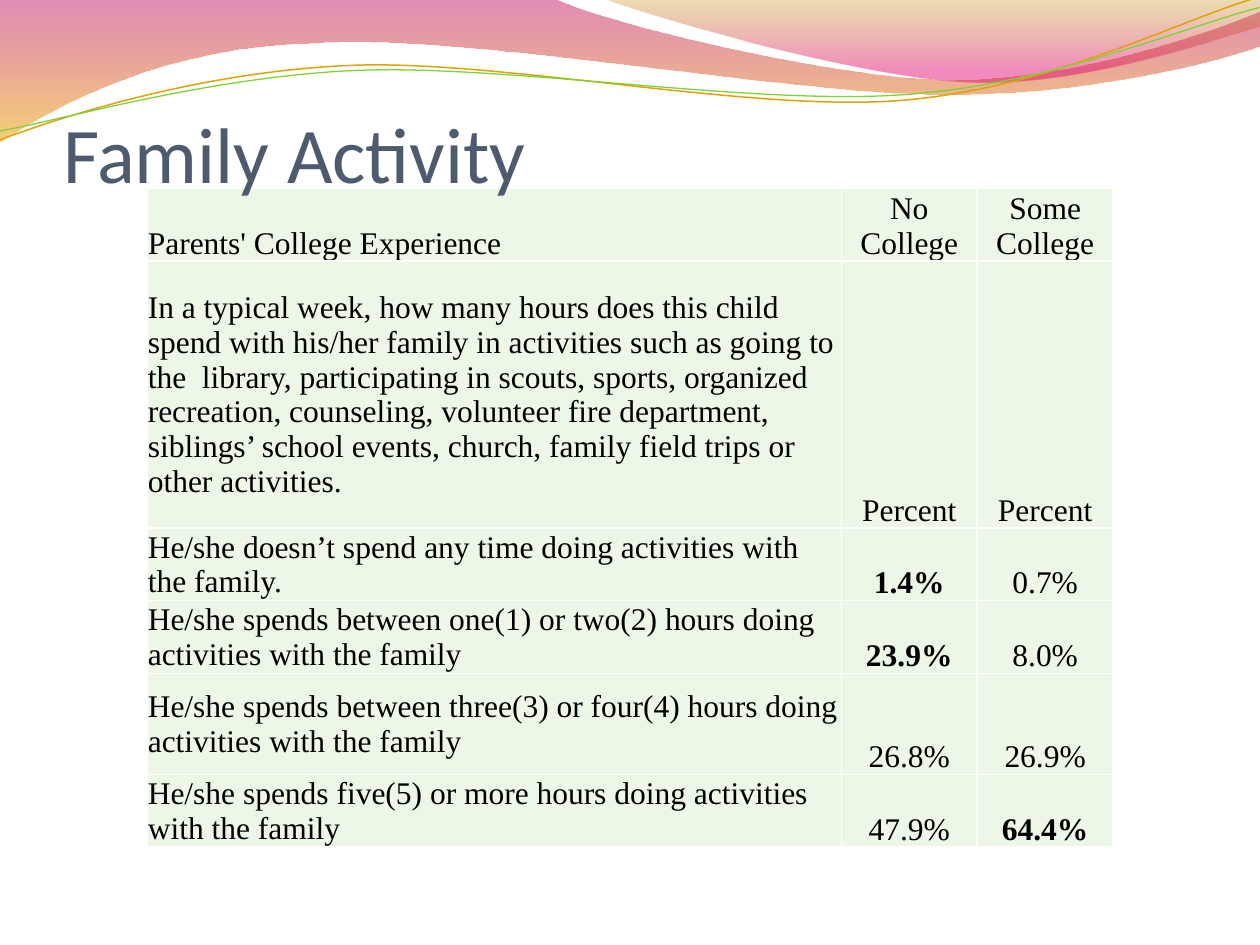
from lxml.etree import SubElement
from pptx import Presentation
from pptx.dml.color import RGBColor
from pptx.enum.text import MSO_ANCHOR, MSO_AUTO_SIZE, PP_ALIGN
from pptx.oxml import parse_xml
from pptx.oxml.ns import nsdecls, qn
from pptx.util import Cm, Pt

# Content
TITLE = "Family Activity"
ROWS = [
    ("Parents' College Experience", "No College", "Some College"),
    ("In a typical week, how many hours does this child spend with his/her family in "
     "activities such as going to the  library, participating in scouts, sports, "
     "organized recreation, counseling, volunteer fire department, siblings’ school "
     "events, church, family field trips or other activities.", "Percent", "Percent"),
    ("He/she doesn’t spend any time doing activities with the family.", "1.4%", "0.7%"),
    ("He/she spends between one(1) or two(2) hours doing activities with the family",
     "23.9%", "8.0%"),
    ("He/she spends between three(3) or four(4) hours doing activities with the family",
     "26.8%", "26.9%"),
    ("He/she spends five(5) or more hours doing activities with the family",
     "47.9%", "64.4%"),
]
BOLD_VALUES = {"1.4%", "23.9%", "64.4%"}
COLUMN_WIDTHS = (14, 2.74, 2.74)
ROW_HEIGHTS = (1.46, 5.38, 1.47, 1.47, 2.03, 1.47)

# Wave outlines in cm: a start point, then steps of one point (line) or three (curve).
# Gradient stops are (position, colour, opacity in percent).
RIBBONS = [
    ((0, 0), [
        [(11.18, -0.03)],
        [(12.09, 0.43), (16.87, 1.6), (19.25, 1.6)],
        [(21.67, 1.6), (24.33, 0.66), (25.4, 0.23)],
        [(25.43, 0.91)],
        [(24.97, 1.12), (22.1, 1.93), (18.95, 1.9)],
        [(15.8, 1.9), (9.7, 0.71), (6.53, 0.86)],
        [(3.28, 0.91), (1.17, 2.11), (-0.03, 2.87)],
        [(0, 0)],
    ], [(0, "BD0059", 45), (1, "F0AB00", 55)]),
    ((12.17, -0.03), [
        [(12.93, 0.28), (17.32, 1.57), (19.53, 1.65)],
        [(21.74, 1.75), (24.41, 0.81), (25.4, 0.53)],
        [(25.4, 0)],
        [(12.17, -0.03)],
    ], [(0, "C38B00", 30), (0.8, "E1006B", 45)]),
]
STRANDS = [
    ((0, 2.82), [
        [(1.22, 2.36), (4.01, 1.45), (7.04, 1.32)],
        [(10.03, 1.19), (15.06, 2.26), (18.11, 2.03)],
        [(21.16, 1.8), (23.83, 0.38), (25.35, -0.05)],
    ], "E0A209", 0.85),
    ((0, 2.64), [
        [(1.19, 2.44), (4.17, 1.55), (7.19, 1.42)],
        [(10.24, 1.3), (15.16, 2.13), (18.21, 1.91)],
        [(21.23, 1.7), (23.9, 0.53), (25.4, 0.15)],
    ], "7FD13B", 0.75),
]


def colour(hex_string):
    return RGBColor.from_string(hex_string)


def add_wave(shapes, start, steps, close):
    builder = shapes.build_freeform(Cm(start[0]), Cm(start[1]))
    builder.add_line_segments([(Cm(x), Cm(y)) for step in steps for x, y in step], close)
    shape = builder.convert_to_shape()
    shape.shadow.inherit = False
    # Join the three segments of each curve step into one Bezier curve
    segments = iter(list(shape._element.iter(qn("a:lnTo"))))
    for step in steps:
        first, *others = [next(segments) for _ in step]
        if others:
            first.tag = qn("a:cubicBezTo")
            for segment in others:
                first.append(segment[0])
                segment.getparent().remove(segment)
    return shape


def format_text(text_frame, font_name, size, hex_string, alignment, bold=False):
    for paragraph in text_frame.paragraphs:
        paragraph.alignment = alignment
        for run in paragraph.runs:
            run.font.name = font_name
            run.font.size = Pt(size)
            run.font.bold = bold
            run.font.color.rgb = colour(hex_string)


def add_borders(cell, hex_string, width):
    properties = cell._tc.get_or_add_tcPr()
    for side in ("lnL", "lnR", "lnT", "lnB"):
        properties.append(parse_xml(
            f'<a:{side} {nsdecls("a")} w="{Pt(width)}"><a:solidFill>'
            f'<a:srgbClr val="{hex_string}"/></a:solidFill></a:{side}>'))


presentation = Presentation()
presentation.slide_width, presentation.slide_height = Cm(25.4), Cm(19.05)
slide = presentation.slides.add_slide(presentation.slide_layouts[5])
shapes = slide.shapes

# Ribbons with see-through gradients, running from top to bottom
for start, steps, stops in RIBBONS:
    ribbon = add_wave(shapes, start, steps, close=True)
    ribbon.line.fill.background()
    ribbon.fill.gradient()
    ribbon.fill.gradient_angle = 270
    for stop, (position, hex_string, _) in zip(ribbon.fill.gradient_stops, stops):
        stop.position = position
        stop.color.rgb = colour(hex_string)
    for element, (_, _, opacity) in zip(ribbon._element.spPr.iter(qn("a:srgbClr")), stops):
        SubElement(element, qn("a:alpha"), val=str(opacity * 1000))

# Thin strands
for start, steps, hex_string, width in STRANDS:
    strand = add_wave(shapes, start, steps, close=False)
    strand.fill.background()
    strand.line.color.rgb = colour(hex_string)
    strand.line.width = Pt(width)

# Table
table = shapes.add_table(len(ROWS), len(COLUMN_WIDTHS), Cm(2.96), Cm(3.8),
                         Cm(sum(COLUMN_WIDTHS)), Cm(sum(ROW_HEIGHTS))).table
table.first_row = table.horz_banding = False
for column, width in zip(table.columns, COLUMN_WIDTHS):
    column.width = Cm(width)
for row, height in zip(table.rows, ROW_HEIGHTS):
    row.height = Cm(height)
for r, texts in enumerate(ROWS):
    for c, text in enumerate(texts):
        cell = table.cell(r, c)
        cell.text_frame.text = text
        cell.margin_left = cell.margin_right = cell.margin_top = Cm(0.02)
        cell.margin_bottom = 0
        is_question = c == 0 and r > 0
        cell.vertical_anchor = MSO_ANCHOR.MIDDLE if is_question else MSO_ANCHOR.BOTTOM
        format_text(cell.text_frame, "Times New Roman", 18, "000000",
                    PP_ALIGN.CENTER if c else PP_ALIGN.LEFT, text in BOLD_VALUES)
        add_borders(cell, "FFFFFF", 1)
        cell.fill.solid()
        cell.fill.fore_color.rgb = colour("ECF7E8")

# Title, in front of the table
title = shapes.title
title.left, title.top, title.width, title.height = Cm(1.27), Cm(1.96), Cm(22.86), Cm(2.06)
frame = title.text_frame
frame.text = TITLE
frame.word_wrap = True
frame.auto_size = MSO_AUTO_SIZE.NONE
frame.vertical_anchor = MSO_ANCHOR.BOTTOM
frame.margin_left = frame.margin_right = frame.margin_bottom = 0
frame.margin_top = Cm(0.13)
format_text(frame, "Calibri", 45, "4E5B6F", PP_ALIGN.LEFT)
shapes._spTree.append(title._element)

presentation.save("out.pptx")
